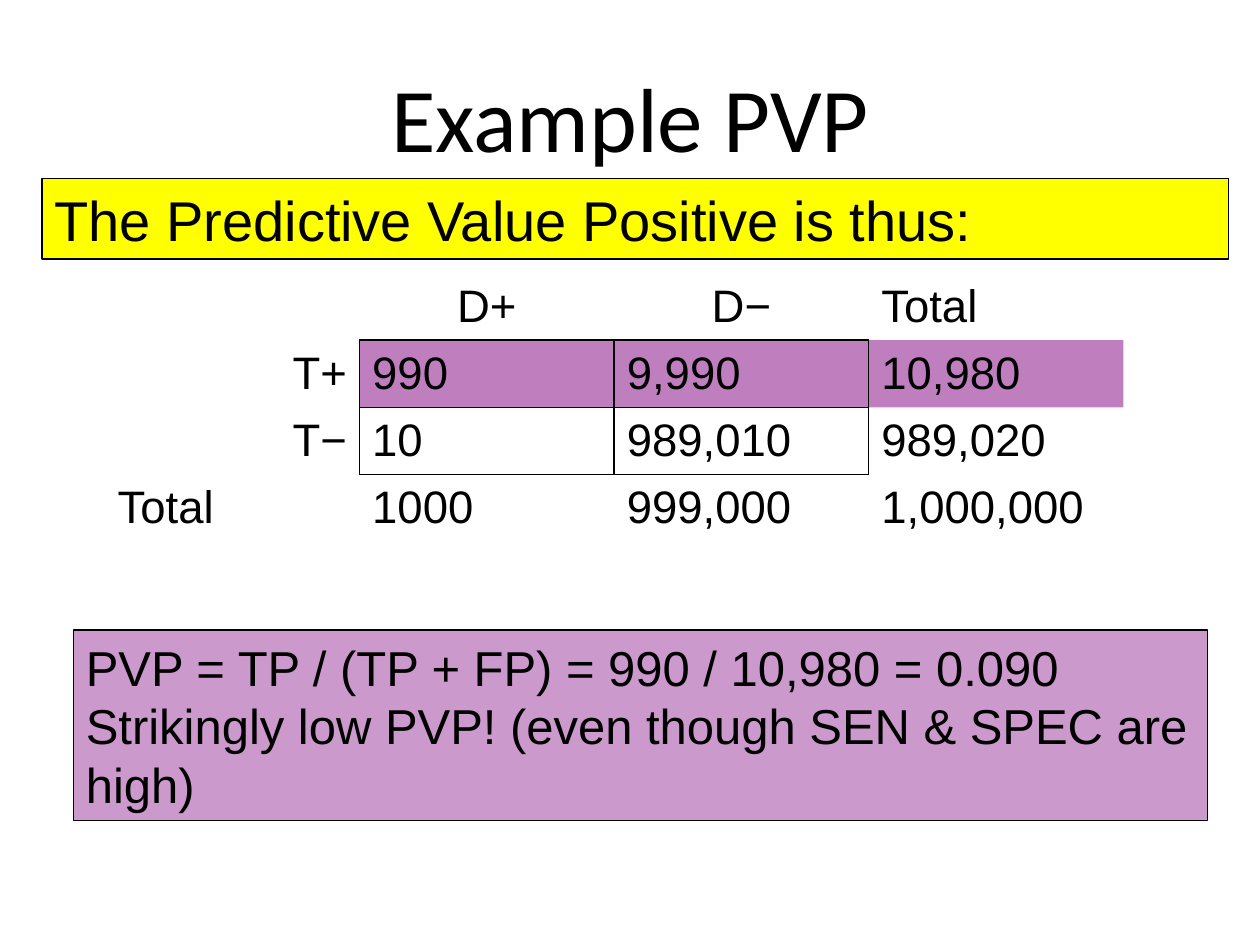
from lxml.etree import SubElement
from pptx import Presentation
from pptx.dml.color import RGBColor
from pptx.enum.shapes import MSO_SHAPE as Shape
from pptx.enum.text import MSO_ANCHOR as Anchor, PP_ALIGN as Align
from pptx.oxml.ns import qn
from pptx.util import Pt

BLACK, YELLOW, PURPLE = "000000", "FFFF00", "800080"
ROWS = [
    ["", "D+", "D−", "Total"],
    ["T+", "990", "9,990", "10,980"],
    ["T−", "10", "989,010", "989,020"],
    ["Total", "1000", "999,000", "1,000,000"],
]


def color(hex_string):
    return RGBColor.from_string(hex_string)


def is_count(row, column):
    """Tell whether a cell is one of the four framed counts."""
    return row in (1, 2) and column in (1, 2)


class SlideBuilder:
    title_font, body_font = "Calibri", "Arial"

    def __init__(self, slide):
        self.slide = slide

    def style(self, paragraph, size, align=Align.LEFT, font_name=body_font):
        paragraph.alignment = align
        paragraph.font.name = font_name
        paragraph.font.size = Pt(size)
        paragraph.font.color.rgb = color(BLACK)

    def fill(self, fill, hex_string, opacity=100):
        fill.solid()
        fill.fore_color.rgb = color(hex_string)
        if opacity < 100:
            solid = fill._xPr.find(qn("a:solidFill"))
            SubElement(solid[0], qn("a:alpha"), val=str(opacity * 1000))

    def title(self, text, left, top, width, height):
        title = self.slide.shapes.title
        title.left, title.top = Pt(left), Pt(top)
        title.width, title.height = Pt(width), Pt(height)
        title.text = text
        title.text_frame.vertical_anchor = Anchor.MIDDLE
        self.style(title.text_frame.paragraphs[0], 52, Align.CENTER, self.title_font)

    def box(self, text, left, top, width, height, size, hex_string, opacity=100):
        shape = self.slide.shapes.add_shape(
            Shape.RECTANGLE, Pt(left), Pt(top), Pt(width), Pt(height))
        shape.shadow.inherit = False
        self.fill(shape.fill, hex_string, opacity)
        shape.line.color.rgb = color(BLACK)
        shape.line.width = Pt(0.75)
        frame = shape.text_frame
        frame.word_wrap = True
        frame.vertical_anchor = Anchor.MIDDLE
        frame.text = text
        for paragraph in frame.paragraphs:
            self.style(paragraph, size)

    def borders(self, cell, row, column):
        """Draw every edge that touches a framed count and clear the others."""
        neighbours = {"L": (row, column - 1), "R": (row, column + 1),
                      "T": (row - 1, column), "B": (row + 1, column)}
        properties = cell._tc.get_or_add_tcPr()
        for side, neighbour in neighbours.items():
            line = SubElement(properties, qn(f"a:ln{side}"), w=str(Pt(1)))
            if is_count(row, column) or is_count(*neighbour):
                solid = SubElement(line, qn("a:solidFill"))
                SubElement(solid, qn("a:srgbClr"), val=BLACK)
            else:
                SubElement(line, qn("a:noFill"))

    def table(self, rows, left, top, width, height):
        table = self.slide.shapes.add_table(
            len(rows), len(rows[0]), Pt(left), Pt(top), Pt(width), Pt(height)).table
        table.first_row = table.horz_banding = False
        for row, texts in enumerate(rows):
            for column, text in enumerate(texts):
                cell = table.cell(row, column)
                cell.text = text
                cell.vertical_anchor = Anchor.MIDDLE
                self.borders(cell, row, column)
                if row == 1 and column > 0:
                    self.fill(cell.fill, PURPLE, 50)
                else:
                    cell.fill.background()
                if row == 0 and column in (1, 2):
                    align = Align.CENTER
                elif column == 0 and row in (1, 2):
                    align = Align.RIGHT
                else:
                    align = Align.LEFT
                self.style(cell.text_frame.paragraphs[0], 26, align)


def main():
    presentation = Presentation()
    presentation.slide_width, presentation.slide_height = Pt(720), Pt(540)
    builder = SlideBuilder(presentation.slides.add_slide(presentation.slide_layouts[5]))
    builder.title("Example PVP", 36, 21.6, 648, 90)
    builder.table(ROWS, 60, 156, 582, 153.6)
    builder.box("PVP = TP / (TP + FP) = 990 / 10,980 = 0.090\n"
                "Strikingly low PVP! (even though SEN & SPEC are high)",
                42, 360, 648, 109, 28, PURPLE, opacity=40)
    builder.box("The Predictive Value Positive is thus:", 24, 102, 678, 46, 32, YELLOW)
    presentation.save("out.pptx")


if __name__ == "__main__":
    main()
